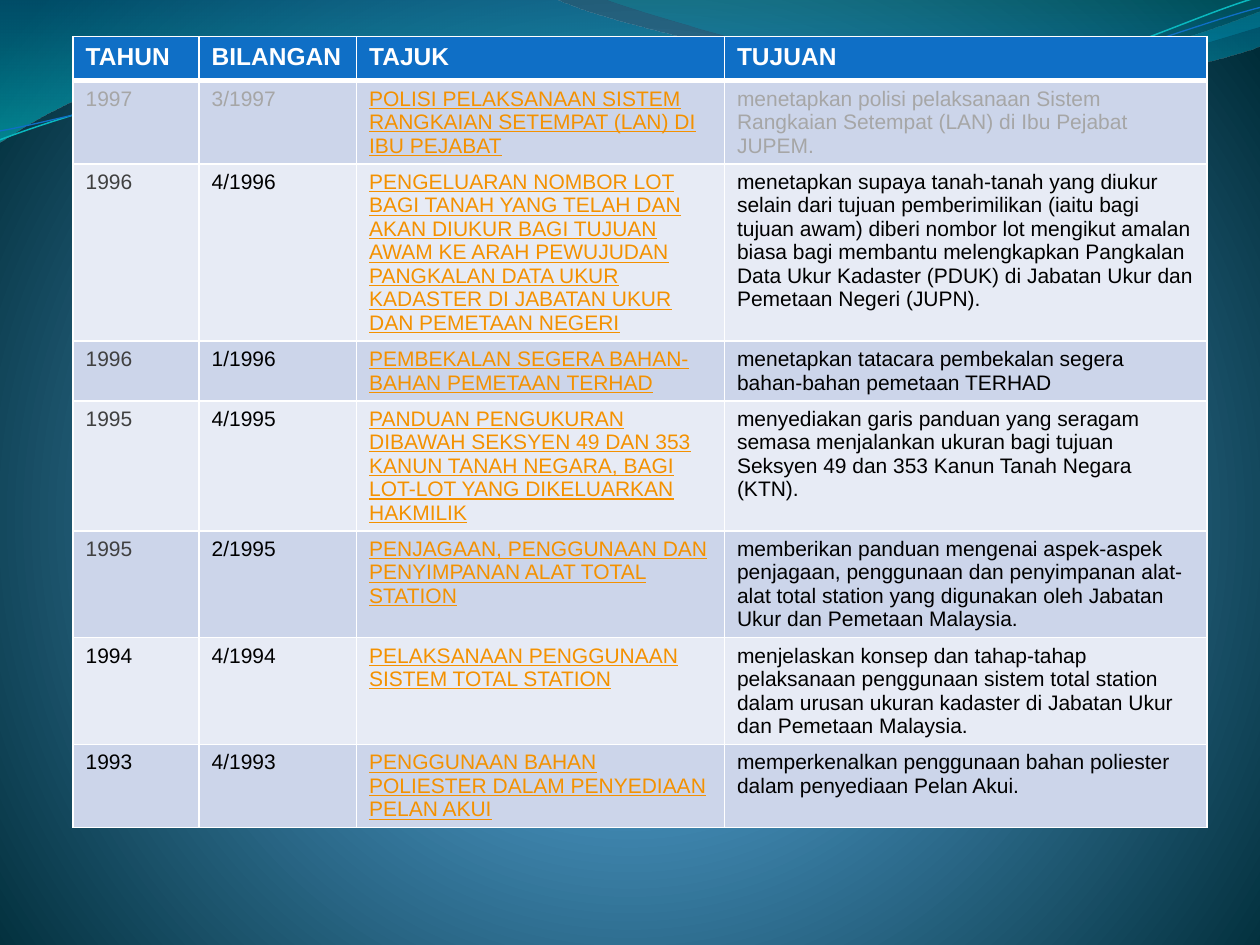
import math

from lxml import etree
from pptx import Presentation
from pptx.dml.color import RGBColor
from pptx.oxml.ns import qn
from pptx.util import Inches, Pt

WIDTH, HEIGHT = 10, 7.5
FONT = "Arial"
WHITE, BLACK, BLUE, ORANGE = "FFFFFF", "000000", "0F6FC6", "F49100"
PALE_GREY, DARK_GREY = "A6A6A6", "404040"
BANDS = ("CCD5EA", "E7EBF5")
DOWNWARD = ("lin", {"ang": "5400000", "scaled": "1"})
TILT = 2.7

WAVES = [
    ((0, 0), [
        [(4.4, -0.01)],
        [(4.76, 0.17), (6.64, 0.63), (7.58, 0.63)],
        [(8.53, 0.63), (9.58, 0.26), (10, 0.09)],
        [(10.01, 0.36)],
        [(9.83, 0.44), (8.7, 0.76), (7.46, 0.75)],
        [(6.22, 0.75), (3.82, 0.28), (2.57, 0.34)],
        [(1.29, 0.36), (0.46, 0.83), (-0.01, 1.13)],
        [(0, 0)],
    ], [(0, "0074A1", 45), (100, "00C6CF", 55)]),
    ((4.79, -0.01), [
        [(5.09, 0.11), (6.82, 0.62), (7.69, 0.65)],
        [(8.56, 0.69), (9.61, 0.32), (10, 0.21)],
        [(10, 0)],
        [(4.79, -0.01)],
    ], [(0, "00A1A9", 30), (80, "008BBF", 45)]),
]
STRANDS = [
    ((0, 1.11), [
        [(0.48, 0.93), (1.58, 0.57), (2.77, 0.52)],
        [(3.95, 0.47), (5.93, 0.89), (7.13, 0.8)],
        [(8.33, 0.71), (9.38, 0.15), (9.98, -0.02)],
    ], "0AB8BF", 0.85),
    ((0, 1.04), [
        [(0.47, 0.96), (1.64, 0.61), (2.83, 0.56)],
        [(4.03, 0.51), (5.97, 0.84), (7.17, 0.75)],
        [(8.36, 0.67), (9.41, 0.21), (10, 0.06)],
    ], BLUE, 0.75),
]

TABLE_BOX = (0.58, 0.29, 9, 6.65)
COLUMNS = (1, 1.25, 2.92, 3.83)
ROWS = (0.35, 0.45, 0.87) + (0.4,) * 5
HEADINGS = ("TAHUN", "BILANGAN", "TAJUK", "TUJUAN")
CIRCULARS = [
    ("1997", "3/1997",
     "POLISI PELAKSANAAN SISTEM RANGKAIAN SETEMPAT (LAN) DI IBU PEJABAT",
     "menetapkan polisi pelaksanaan Sistem Rangkaian Setempat (LAN) di Ibu Pejabat JUPEM."),
    ("1996", "4/1996",
     "PENGELUARAN NOMBOR LOT BAGI TANAH YANG TELAH DAN AKAN DIUKUR BAGI TUJUAN AWAM "
     "KE ARAH PEWUJUDAN PANGKALAN DATA UKUR KADASTER DI JABATAN UKUR DAN PEMETAAN NEGERI",
     "menetapkan supaya tanah-tanah yang diukur selain dari tujuan pemberimilikan (iaitu bagi "
     "tujuan awam) diberi nombor lot mengikut amalan biasa bagi membantu melengkapkan Pangkalan "
     "Data Ukur Kadaster (PDUK) di Jabatan Ukur dan Pemetaan Negeri (JUPN)."),
    ("1996", "1/1996",
     "PEMBEKALAN SEGERA BAHAN- BAHAN PEMETAAN TERHAD",
     "menetapkan tatacara pembekalan segera bahan-bahan pemetaan TERHAD"),
    ("1995", "4/1995",
     "PANDUAN PENGUKURAN DIBAWAH SEKSYEN 49 DAN 353 KANUN TANAH NEGARA, "
     "BAGI LOT-LOT YANG DIKELUARKAN HAKMILIK",
     "menyediakan garis panduan yang seragam semasa menjalankan ukuran bagi tujuan "
     "Seksyen 49 dan 353 Kanun Tanah Negara (KTN)."),
    ("1995", "2/1995",
     "PENJAGAAN, PENGGUNAAN DAN PENYIMPANAN ALAT TOTAL STATION",
     "memberikan panduan mengenai aspek-aspek penjagaan, penggunaan dan penyimpanan alat-alat "
     "total station yang digunakan oleh Jabatan Ukur dan Pemetaan Malaysia."),
    ("1994", "4/1994",
     "PELAKSANAAN PENGGUNAAN SISTEM TOTAL STATION",
     "menjelaskan konsep dan tahap-tahap pelaksanaan penggunaan sistem total station "
     "dalam urusan ukuran kadaster di Jabatan Ukur dan Pemetaan Malaysia."),
    ("1993", "4/1993",
     "PENGGUNAAN BAHAN POLIESTER DALAM PENYEDIAAN PELAN AKUI",
     "memperkenalkan penggunaan bahan poliester dalam penyediaan Pelan Akui."),
]


def color(value):
    """Turn a hex string into a colour."""
    return RGBColor.from_string(value)


def add_node(parent, tag, **attributes):
    """Append a drawing element to its parent."""
    return etree.SubElement(parent, qn(f"a:{tag}"), attributes)


def set_gradient(fill, holder, stops, direction):
    """Fill with a gradient of (position, colour, opacity) stops."""
    fill.gradient()
    gradient = holder.find(".//" + qn("a:gradFill"))
    for child in list(gradient):
        gradient.remove(child)
    stop_list = add_node(gradient, "gsLst")
    for position, value, opacity in stops:
        stop = add_node(stop_list, "gs", pos=str(position * 1000))
        shade = add_node(stop, "srgbClr", val=value)
        if opacity < 100:
            add_node(shade, "alpha", val=str(opacity * 1000))
    tag, attributes = direction
    return add_node(gradient, tag, **attributes)


def paint_background(slide):
    """Paint the glow that rises from the bottom of the slide."""
    stops = [(0, "4AA0D6", 100), (25, "4C98C7", 100), (100, "002C38", 100)]
    glow = set_gradient(slide.background.fill, slide.element, stops, ("path", {"path": "circle"}))
    add_node(glow, "fillToRect", l="10000", t="110000", r="10000", b="100000")


def turn(point, center, degrees):
    """Turn a point clockwise about a center."""
    angle = math.radians(degrees)
    x, y = point[0] - center[0], point[1] - center[1]
    return (center[0] + x * math.cos(angle) - y * math.sin(angle),
            center[1] + x * math.sin(angle) + y * math.cos(angle))


def add_curve(slide, start, segments, close):
    """Add a shadowless outline of straight and cubic segments."""
    anchors = [(Inches(x), Inches(y)) for x, y in [start] + [part[-1] for part in segments]]
    builder = slide.shapes.build_freeform(*anchors[0])
    builder.add_line_segments(anchors[1:], close=close)
    shape = builder.convert_to_shape()
    shape.shadow.inherit = False
    for line, segment in zip(list(shape.element.iter(qn("a:lnTo"))), segments):
        if len(segment) == 3:
            line.tag = qn("a:cubicBezTo")
            line.remove(line[0])
            for x, y in segment:
                add_node(line, "pt", x=str(Inches(x) - shape.left), y=str(Inches(y) - shape.top))
    return shape


def add_waves(slide):
    """Draw the translucent waves and thin tilted strands along the top."""
    for start, segments, stops in WAVES:
        shape = add_curve(slide, start, segments, True)
        set_gradient(shape.fill, shape.element, stops, DOWNWARD)
        shape.line.fill.background()
    for start, segments, value, width in STRANDS:
        center = [(a + b) / 2 for a, b in zip(start, segments[-1][-1])]
        level = [[turn(point, center, TILT) for point in segment] for segment in segments]
        shape = add_curve(slide, turn(start, center, TILT), level, False)
        shape.rotation = 360 - TILT
        shape.fill.background()
        shape.line.color.rgb = color(value)
        shape.line.width = Pt(width)


def style_cell(cell, text, size, value, fill, bold=False, underline=False):
    """Write, fill and border one cell."""
    cell.text = text
    font = cell.text_frame.paragraphs[0].font
    font.name, font.size, font.bold, font.underline = FONT, Pt(size), bold, underline
    font.color.rgb = color(value)
    properties = cell._tc.get_or_add_tcPr()
    for side in "LRTB":
        width = Pt(3 if bold and side == "B" else 1)
        border = add_node(properties, f"ln{side}", w=str(width))
        add_node(add_node(border, "solidFill"), "srgbClr", val=WHITE)
    cell.fill.solid()
    cell.fill.fore_color.rgb = color(fill)


def text_color(year, column):
    """Choose the text colour for a year and column."""
    if column == 2:
        return ORANGE
    if year == "1997":
        return PALE_GREY
    return DARK_GREY if column == 0 and year in ("1995", "1996") else BLACK


def add_circulars(slide, box):
    """Add the table of circulars inside the box."""
    table = slide.shapes.add_table(len(ROWS), len(COLUMNS), *map(Inches, box)).table
    table.horz_banding = False
    for column, share in zip(table.columns, COLUMNS):
        column.width = Inches(box[2] * share / sum(COLUMNS))
    for row, height in zip(table.rows, ROWS):
        row.height = Inches(height)
    for column, heading in enumerate(HEADINGS):
        style_cell(table.cell(0, column), heading, 14, WHITE, BLUE, bold=True)
    for index, circular in enumerate(CIRCULARS):
        for column, text in enumerate(circular):
            style_cell(table.cell(index + 1, column), text, 12, text_color(circular[0], column),
                       BANDS[index % 2], underline=column == 2)


def main():
    """Build the slide and save it."""
    presentation = Presentation()
    presentation.slide_width, presentation.slide_height = Inches(WIDTH), Inches(HEIGHT)
    slide = presentation.slides.add_slide(presentation.slide_layouts[6])
    paint_background(slide)
    add_waves(slide)
    add_circulars(slide, TABLE_BOX)
    presentation.save("out.pptx")


if __name__ == "__main__":
    main()
